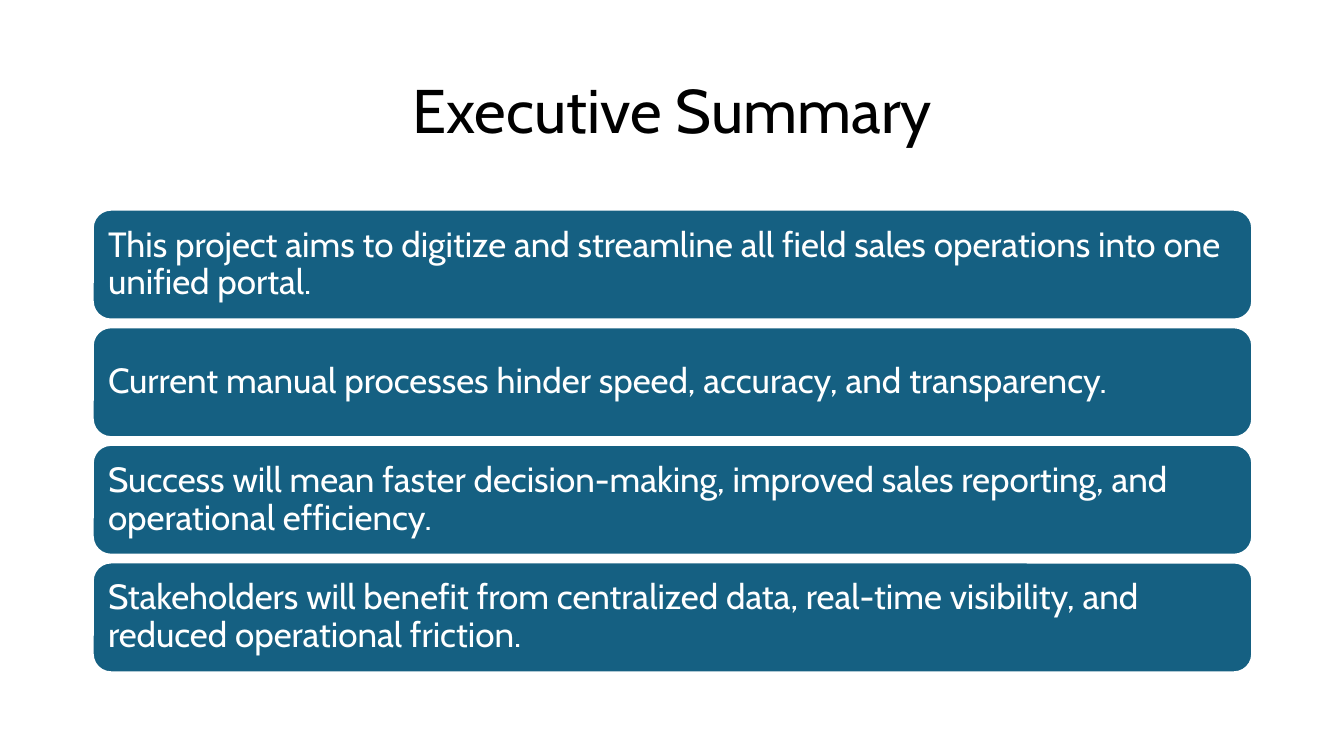
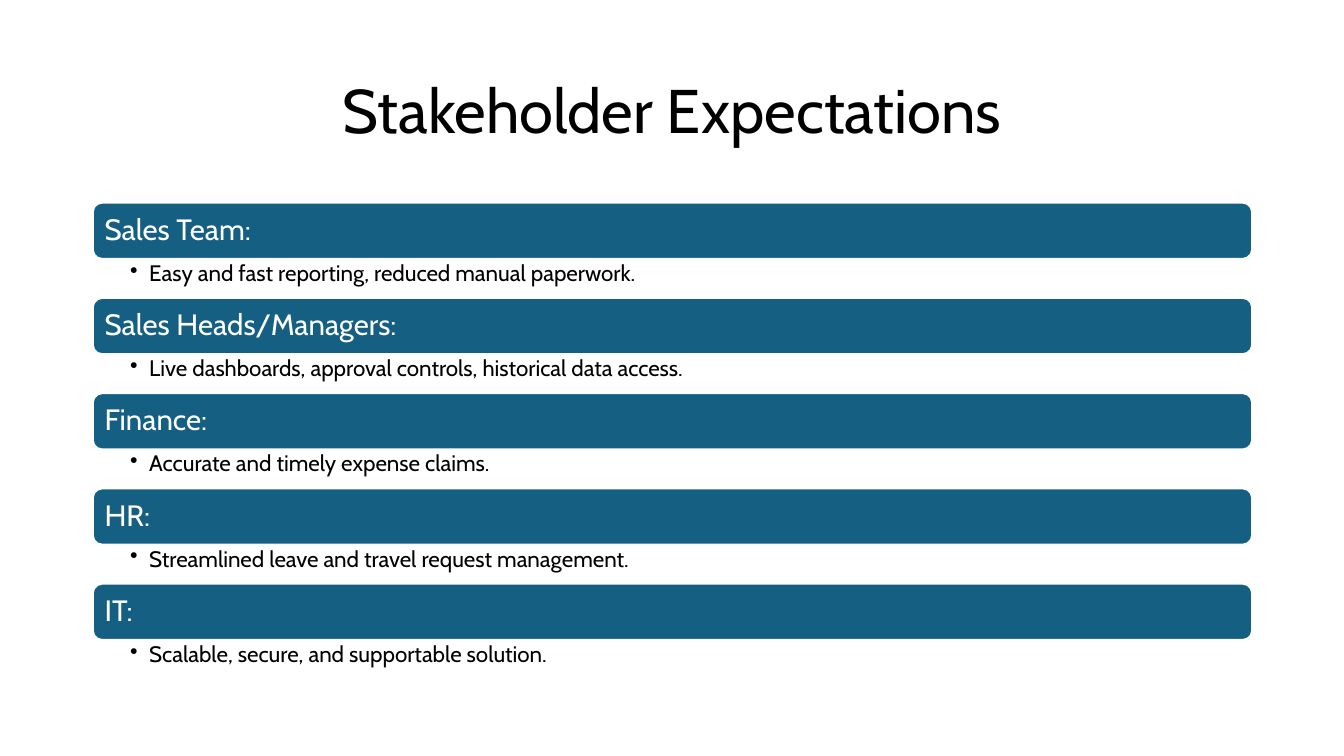
"""Build the executive summary and stakeholder expectations slides."""
from lxml import etree
from pptx import Presentation
from pptx.dml.color import RGBColor
from pptx.enum.shapes import MSO_SHAPE as SHAPE
from pptx.enum.text import MSO_ANCHOR as ANCHOR, PP_ALIGN as ALIGN
from pptx.oxml.ns import qn
from pptx.util import Inches, Pt

SUMMARY = [
    "This project aims to digitize and streamline all field sales operations into one unified portal.",
    "Current manual processes hinder speed, accuracy, and transparency.",
    "Success will mean faster decision-making, improved sales reporting, and operational efficiency.",
    "Stakeholders will benefit from centralized data, real-time visibility, and reduced operational friction.",
]
EXPECTATIONS = [
    ("Sales Team:", "Easy and fast reporting, reduced manual paperwork."),
    ("Sales Heads/Managers:", "Live dashboards, approval controls, historical data access."),
    ("Finance:", "Accurate and timely expense claims."),
    ("HR:", "Streamlined leave and travel request management."),
    ("IT:", "Scalable, secure, and supportable solution."),
]

BLACK = RGBColor(0x00, 0x00, 0x00)
WHITE = RGBColor(0xFF, 0xFF, 0xFF)
TEAL = RGBColor(0x15, 0x60, 0x82)
FONT = "Cabin"
LEFT, WIDTH = 0.92, 11.5
BULLET_INDENT = 0.19


def write(sp, text, size, color, insets, align=ALIGN.LEFT, anchor=ANCHOR.MIDDLE, bullet=False):
    tf = sp.text_frame
    tf.word_wrap = True
    tf.vertical_anchor = anchor
    for side, inset in zip(("left", "top", "right", "bottom"), insets):
        setattr(tf, f"margin_{side}", Inches(inset))
    p = tf.paragraphs[0]
    if bullet:
        pPr = p._p.get_or_add_pPr()
        pPr.set("marL", str(Inches(BULLET_INDENT)))
        pPr.set("indent", str(-Inches(BULLET_INDENT)))
        etree.SubElement(pPr, qn("a:buChar")).set("char", "•")
    p.alignment = align
    p.line_spacing = 0.9
    r = p.add_run()
    r.text = text
    for name, value in {"name": FONT, "size": Pt(size)}.items():
        setattr(r.font, name, value)
    r.font.color.rgb = color


def add_text(s, top, height, *args, **kwargs):
    sp = s.shapes.add_textbox(Inches(LEFT), Inches(top), Inches(WIDTH), Inches(height))
    write(sp, *args, **kwargs)


def add_bar(s, top, height, text, size, inset):
    sp = s.shapes.add_shape(SHAPE.ROUNDED_RECTANGLE, Inches(LEFT), Inches(top),
                            Inches(WIDTH), Inches(height))
    sp.shadow.inherit = False
    sp.fill.solid()
    sp.fill.fore_color.rgb = TEAL
    sp.line.color.rgb = WHITE
    sp.line.width = Pt(1.5)
    write(sp, text, size, WHITE, [inset] * 4)


def add_slide(prs, title):
    s = prs.slides.add_slide(prs.slide_layouts[6])
    add_text(s, 0.4, 1.45, title, 44, BLACK, (0.1, 0.05, 0.1, 0.05), ALIGN.CENTER)
    return s


def spread(items, first, last):
    """Pair each item with a top, evenly spaced from first to last."""
    pitch = (last - first) / (len(items) - 1)
    return [(first + i * pitch, item) for i, item in enumerate(items)]


def main():
    prs = Presentation()
    prs.slide_width, prs.slide_height = Inches(13.33), Inches(7.5)

    s = add_slide(prs, "Executive Summary")
    for top, text in spread(SUMMARY, 2.08, 5.58):
        add_bar(s, top, 1.09, text, 25, 0.1)

    s = add_slide(prs, "Stakeholder Expectations")
    bar_height = 0.56
    for top, (group, need) in spread(EXPECTATIONS, 2.01, 5.79):
        add_bar(s, top, bar_height, group, 21, 0.09)
        add_text(s, top + bar_height, 0.38, need, 16, BLACK, (0.37, 0.03, 0.16, 0.03),
                 anchor=ANCHOR.TOP, bullet=True)

    prs.save("out.pptx")


if __name__ == "__main__":
    main()
